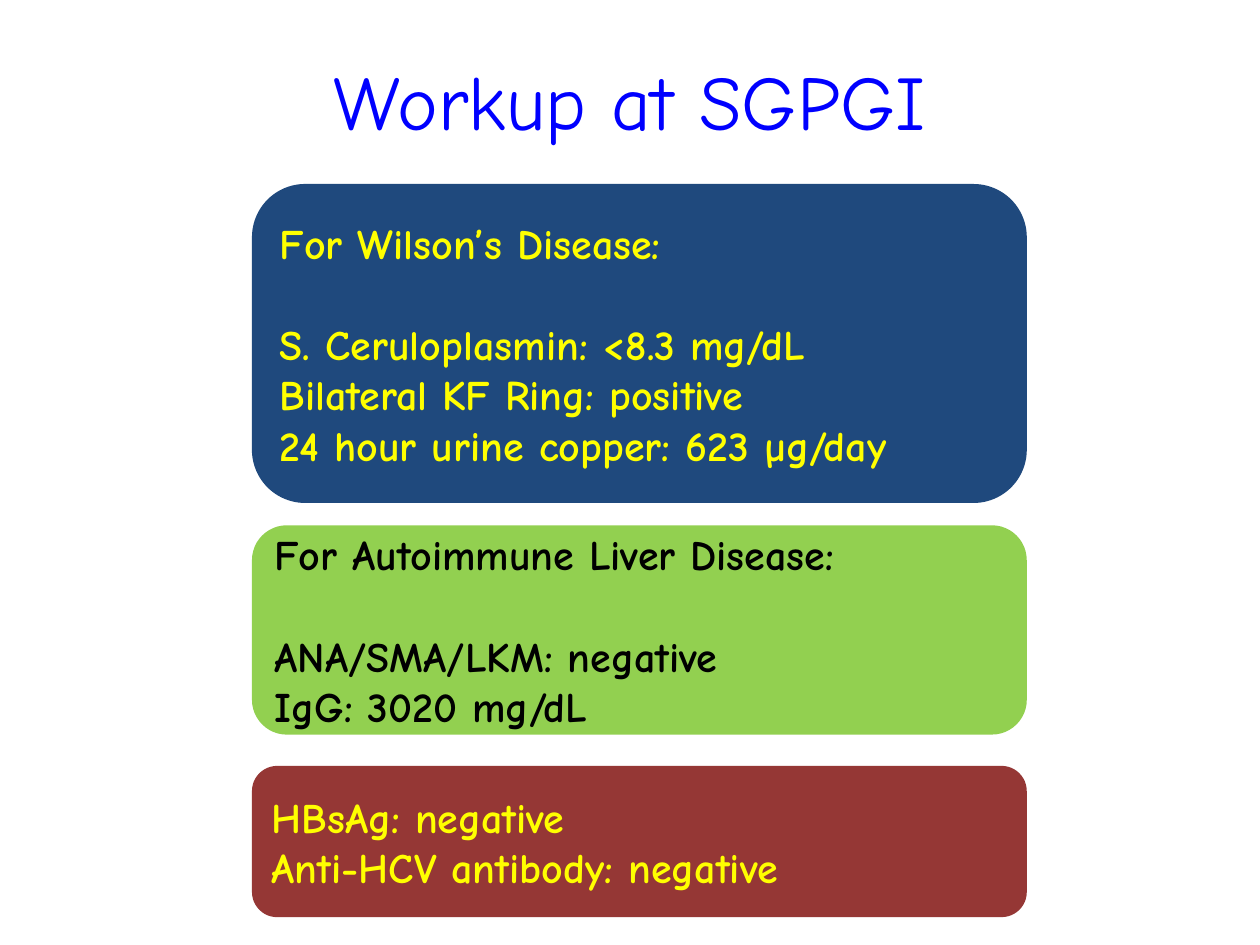
from dataclasses import dataclass

import pptx
import pptx.dml.color
import pptx.enum.shapes
import pptx.enum.text
import pptx.util
from pptx.dml.color import RGBColor
from pptx.util import Cm, Pt

BLUE = RGBColor(0x00, 0x00, 0xFF)
NAVY = RGBColor(0x1F, 0x49, 0x7D)
GREEN = RGBColor(0x92, 0xD0, 0x50)
MAROON = RGBColor(0x95, 0x37, 0x35)
YELLOW = RGBColor(0xFF, 0xFF, 0x00)
BLACK = RGBColor(0x00, 0x00, 0x00)

FONT = "Comic Neue"
PANEL_LEFT, PANEL_WIDTH = Cm(5.08), Cm(15.62)
HEADING_GAP = Pt(29)  # one text line below a panel heading


@dataclass
class Panel:
    top: float
    height: float
    fill: RGBColor
    ink: RGBColor
    findings: list[str]
    heading: str = ""


PANELS = [
    Panel(3.71, 6.43, NAVY, YELLOW,
          ["S. Ceruloplasmin: <8.3 mg/dL",
           "Bilateral KF Ring: positive",
           "24 hour urine copper: 623 µg/day"],
          heading="For Wilson’s Disease:"),
    Panel(10.59, 4.22, GREEN, BLACK,
          ["ANA/SMA/LKM: negative", "IgG: 3020 mg/dL"],
          heading="For Autoimmune Liver Disease:"),
    Panel(15.44, 3.05, MAROON, YELLOW,
          ["HBsAg: negative", "Anti-HCV antibody: negative"]),
]


def write_lines(frame, lines: list[str], align, size: int,
                ink: RGBColor, bold: bool) -> None:
    """Fill a text frame with one paragraph per line, centred vertically."""
    frame.word_wrap = True
    frame.vertical_anchor = pptx.enum.text.MSO_ANCHOR.MIDDLE
    font_format = {"name": FONT, "size": Pt(size), "bold": bold}
    for index, line in enumerate(lines):
        paragraph = frame.paragraphs[0] if index == 0 else frame.add_paragraph()
        paragraph.alignment = align
        run = paragraph.add_run()
        run.text = line
        for attribute, value in font_format.items():
            setattr(run.font, attribute, value)
        run.font.color.rgb = ink


def draw_title(slide, title: str) -> None:
    heading = slide.shapes.add_textbox(Cm(1.27), Cm(0.43), Cm(22.86), Cm(3.18))
    write_lines(heading.text_frame, [title], pptx.enum.text.PP_ALIGN.CENTER,
                44, BLUE, False)


def draw_panel(slide, panel: Panel) -> None:
    card = slide.shapes.add_shape(
        pptx.enum.shapes.MSO_SHAPE.ROUNDED_RECTANGLE,
        PANEL_LEFT, Cm(panel.top), PANEL_WIDTH, Cm(panel.height))
    card.shadow.inherit = False
    card.fill.solid()
    card.fill.fore_color.rgb = panel.fill
    card.line.fill.background()
    lines = ([panel.heading] if panel.heading else []) + panel.findings
    write_lines(card.text_frame, lines, pptx.enum.text.PP_ALIGN.LEFT,
                24, panel.ink, True)
    if panel.heading:
        card.text_frame.paragraphs[0].space_after = HEADING_GAP


def main() -> None:
    presentation = pptx.Presentation()
    presentation.slide_width, presentation.slide_height = Cm(25.4), Cm(19.05)
    slide = presentation.slides.add_slide(presentation.slide_layouts[6])

    # Title
    draw_title(slide, "Workup at SGPGI")

    # Test results, one panel per group
    for panel in PANELS:
        draw_panel(slide, panel)

    presentation.save("out.pptx")


if __name__ == "__main__":
    main()
